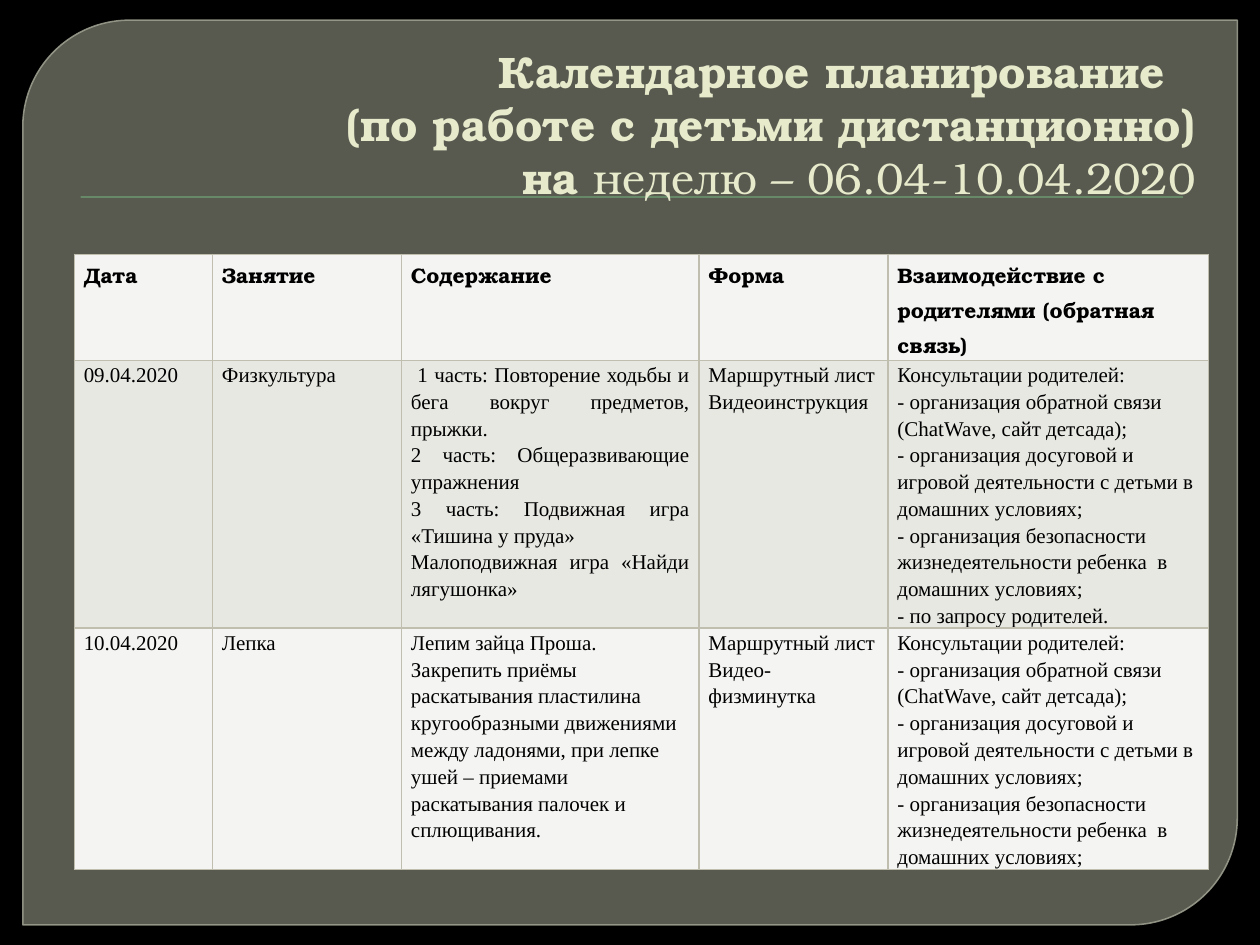
from dataclasses import dataclass

from lxml import etree
from pptx import Presentation
from pptx.dml.color import RGBColor
from pptx.enum.shapes import MSO_SHAPE
from pptx.enum.text import MSO_ANCHOR, MSO_AUTO_SIZE, PP_ALIGN
from pptx.oxml.ns import qn
from pptx.util import Pt

LEFT, RIGHT, JUSTIFY = PP_ALIGN.LEFT, PP_ALIGN.RIGHT, PP_ALIGN.JUSTIFY
BOTTOM, TOP = MSO_ANCHOR.BOTTOM, MSO_ANCHOR.TOP
PANEL_SHAPE, RULE_SHAPE = MSO_SHAPE.ROUND_2_DIAG_RECTANGLE, MSO_SHAPE.RECTANGLE
NO_AUTOFIT = MSO_AUTO_SIZE.NONE
TITLE_ONLY = 5
HEADING_FONT, BODY_FONT = "TeX Gyre Bonum", "Times New Roman"

COLORS = {
    "background": "000000",
    "panel": "888B7B",
    "panel_line": "9DA090",
    "rule": "72A376",
    "title": "E7EACB",
    "text": "000000",
    "border": "C0BEAF",
    "light": "F4F4F2",
    "dark": "E8E8E3",
}


@dataclass
class Line:
    text: str
    align: PP_ALIGN = LEFT


@dataclass
class Row:
    height: float
    fill: str
    font: str
    bold: bool
    cells: list[list[Line]]


def lines(*texts: str, align: PP_ALIGN = LEFT) -> list[Line]:
    return [Line(text, align) for text in texts]


# Table content
COLUMN_WIDTHS = [79, 108, 170, 108, 183]
PARENT_SUPPORT = [
    "Консультации родителей:",
    "- организация обратной связи (ChatWave, сайт детсада);",
    "- организация досуговой и игровой деятельности с детьми в домашних условиях;",
    "- организация безопасности жизнедеятельности ребенка  в домашних условиях;",
]
ROWS = [
    Row(60.5, "light", HEADING_FONT, True, [
        lines("Дата"),
        lines("Занятие"),
        lines("Содержание"),
        lines("Форма"),
        lines("Взаимодействие с родителями (обратная связь)"),
    ]),
    Row(153, "dark", BODY_FONT, False, [
        lines("09.04.2020"),
        lines("Физкультура"),
        lines(
            " 1 часть: Повторение ходьбы и бега вокруг предметов, прыжки.",
            "2 часть: Общеразвивающие упражнения",
            "3 часть: Подвижная игра «Тишина у пруда»",
            "Малоподвижная игра «Найди лягушонка»",
            align=JUSTIFY,
        ),
        lines("Маршрутный лист", "Видеоинструкция"),
        lines(*PARENT_SUPPORT, "- по запросу родителей."),
    ]),
    Row(137.5, "light", BODY_FONT, False, [
        lines("10.04.2020"),
        lines("Лепка"),
        lines("Лепим зайца Проша.", align=JUSTIFY) + lines(
            "Закрепить приёмы раскатывания пластилина кругообразными движениями "
            "между ладонями, при лепке ушей – приемами раскатывания палочек и "
            "сплющивания."
        ),
        lines("Маршрутный лист", "Видео- физминутка"),
        lines(*PARENT_SUPPORT),
    ]),
]


def rgb(name: str) -> RGBColor:
    return RGBColor.from_string(COLORS[name])


def add_run(paragraph, text: str, *, font: str, size: float, color: str, bold: bool) -> None:
    run = paragraph.add_run()
    run.text = text
    run.font.name = font
    run.font.size = Pt(size)
    run.font.bold = bold
    run.font.color.rgb = rgb(color)


def set_opacity(shape_element, parent_tag: str, percent: int) -> None:
    fill = shape_element.spPr.find(qn(parent_tag))
    color = next(fill.iter(qn("a:srgbClr")))
    etree.SubElement(color, qn("a:alpha")).set("val", str(percent * 1000))


def add_decoration(slide, kind: MSO_SHAPE, box: tuple, color: str):
    shape = slide.shapes.add_shape(kind, *map(Pt, box))
    shape.shadow.inherit = False
    shape.fill.solid()
    shape.fill.fore_color.rgb = rgb(color)
    shape.line.fill.background()
    return shape


def add_borders(cell) -> None:
    properties = cell._tc.get_or_add_tcPr()
    for position, side in enumerate(("a:lnL", "a:lnR", "a:lnT", "a:lnB")):
        border = etree.Element(qn(side), w=str(Pt(1)))
        fill = etree.SubElement(border, qn("a:solidFill"))
        etree.SubElement(fill, qn("a:srgbClr"), val=COLORS["border"])
        properties.insert(position, border)


def fill_cell(cell, content: list[Line], row: Row) -> None:
    cell.fill.solid()
    cell.fill.fore_color.rgb = rgb(row.fill)
    cell.margin_left = cell.margin_right = Pt(5.4)
    cell.margin_top = cell.margin_bottom = Pt(0)
    cell.vertical_anchor = TOP
    add_borders(cell)
    frame = cell.text_frame
    for index, line in enumerate(content):
        paragraph = frame.add_paragraph() if index else frame.paragraphs[0]
        paragraph.alignment = line.align
        paragraph.line_spacing = 1.15
        add_run(paragraph, line.text, font=row.font, size=12, color="text", bold=row.bold)


def add_plan_table(slide) -> None:
    height = sum(row.height for row in ROWS)
    table = slide.shapes.add_table(
        len(ROWS), len(COLUMN_WIDTHS), Pt(42.5), Pt(145.4), Pt(sum(COLUMN_WIDTHS)), Pt(height)
    ).table
    for column, width in zip(table.columns, COLUMN_WIDTHS):
        column.width = Pt(width)
    for table_row, row in zip(table.rows, ROWS):
        table_row.height = Pt(row.height)
        for cell, content in zip(table_row.cells, row.cells):
            fill_cell(cell, content, row)


def format_title(title) -> None:
    title.left, title.top, title.width, title.height = map(Pt, (42.5, 21, 648, 129))
    frame = title.text_frame
    frame.auto_size = NO_AUTOFIT
    frame.word_wrap = True
    frame.vertical_anchor = BOTTOM
    frame.margin_bottom = Pt(34)
    paragraph = frame.paragraphs[0]
    paragraph.alignment = RIGHT
    style = {"font": HEADING_FONT, "size": 25.2, "color": "title"}
    add_run(paragraph, "Календарное планирование  ", bold=True, **style)
    paragraph.add_line_break()
    add_run(paragraph, "(по работе с детьми дистанционно)", bold=True, **style)
    paragraph.add_line_break()
    add_run(paragraph, "на ", bold=True, **style)
    add_run(paragraph, "неделю – 06.04-10.04.2020", bold=False, **style)


def main() -> None:
    presentation = Presentation()
    presentation.slide_width, presentation.slide_height = Pt(720), Pt(540)
    slide = presentation.slides.add_slide(presentation.slide_layouts[TITLE_ONLY])
    slide.background.fill.solid()
    slide.background.fill.fore_color.rgb = rgb("background")

    # Panel and rule behind the title
    panel = add_decoration(slide, PANEL_SHAPE, (13, 11.5, 694, 517), "panel")
    panel.adjustments[0], panel.adjustments[1] = 0.118, 0
    panel.line.color.rgb = rgb("panel_line")
    panel.line.width = Pt(0.87)
    set_opacity(panel.element, "a:solidFill", 65)
    set_opacity(panel.element, "a:ln", 88)
    add_decoration(slide, RULE_SHAPE, (46, 112.2, 630, 0.7), "rule")

    # Title, moved in front of the panel
    title = slide.shapes.title
    title.element.getparent().append(title.element)
    format_title(title)

    add_plan_table(slide)
    presentation.save("out.pptx")


if __name__ == "__main__":
    main()
